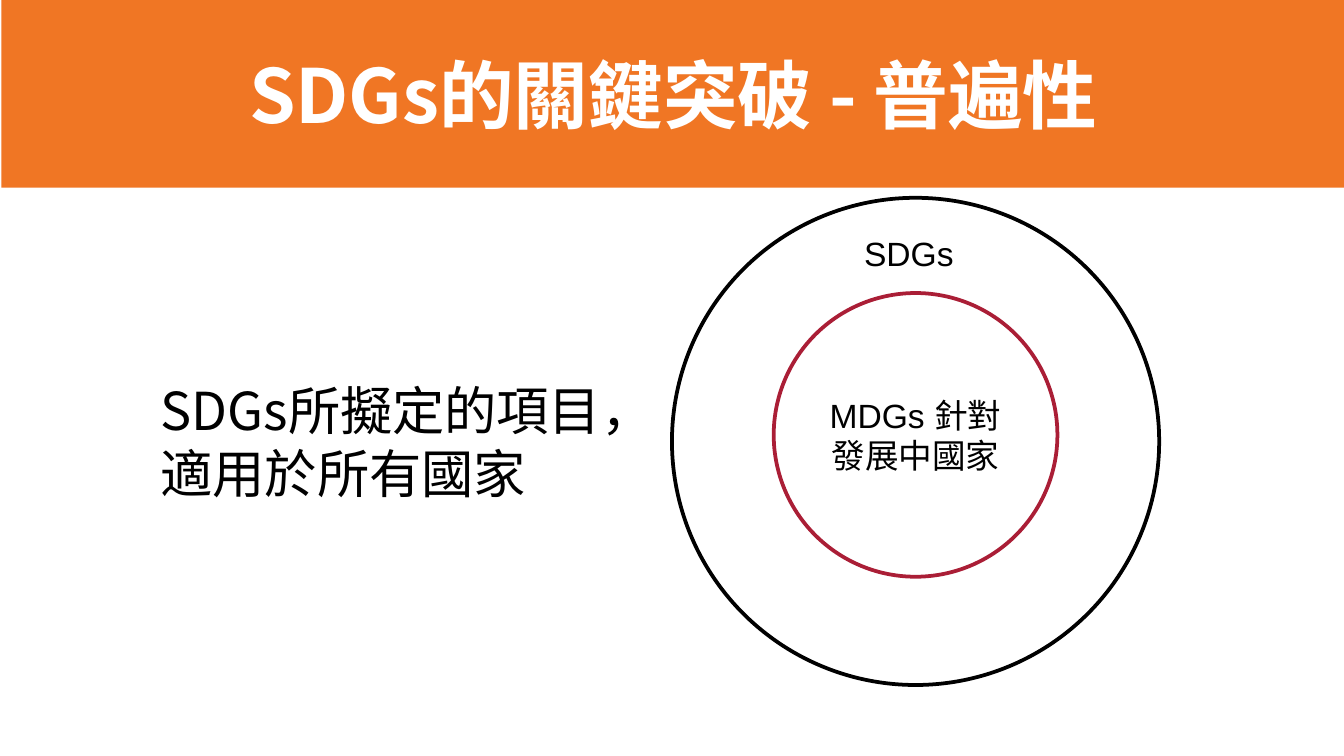
from dataclasses import dataclass

from pptx import Presentation
from pptx.dml.color import RGBColor
from pptx.enum.shapes import MSO_SHAPE
from pptx.enum.text import MSO_ANCHOR, MSO_AUTO_SIZE, PP_ALIGN
from pptx.util import Pt

ELLIPSE = MSO_SHAPE.OVAL
MIDDLE = MSO_ANCHOR.MIDDLE
FIXED, GROW = MSO_AUTO_SIZE.NONE, MSO_AUTO_SIZE.SHAPE_TO_FIT_TEXT
LEFT, CENTER = PP_ALIGN.LEFT, PP_ALIGN.CENTER
TITLE_ONLY = 5


@dataclass(frozen=True)
class Theme:
    """Colours, fonts and type sizes of the slide."""
    orange: RGBColor = RGBColor(0xF0, 0x76, 0x24)
    crimson: RGBColor = RGBColor(0xAA, 0x1E, 0x36)
    black: RGBColor = RGBColor(0, 0, 0)
    white: RGBColor = RGBColor(255, 255, 255)
    heading_font: str = "Noto Sans CJK KR"
    label_font: str = "Arial"
    title_size: int = 40
    statement_size: int = 28
    label_size: int = 18
    outline: int = 2


THEME = Theme()


def write_lines(frame, lines, font, size, color, align=LEFT, bold=False):
    """Write each line as one paragraph with one run."""
    for index, line in enumerate(lines):
        paragraph = frame.paragraphs[0] if index == 0 else frame.add_paragraph()
        paragraph.alignment = align
        run = paragraph.add_run()
        run.text = line
        run.font.name = font
        run.font.size = Pt(size)
        run.font.bold = bold
        run.font.color.rgb = color


def add_title_band(slide, box, text):
    """Turn the title placeholder into a filled band."""
    title = slide.shapes.title
    title.left, title.top, title.width, title.height = map(Pt, box)
    title.fill.solid()
    title.fill.fore_color.rgb = THEME.orange
    frame = title.text_frame
    frame.auto_size = FIXED
    frame.vertical_anchor = MIDDLE
    write_lines(frame, [text], THEME.heading_font, THEME.title_size,
                THEME.white, CENTER, True)


def add_free_text(slide, box, lines, font, size):
    """Place unwrapped black text."""
    frame = slide.shapes.add_textbox(*map(Pt, box)).text_frame
    frame.word_wrap = False
    frame.auto_size = GROW
    write_lines(frame, lines, font, size, THEME.black)


def add_circle(slide, box, color, lines=()):
    """Place an outlined white circle with optional centred lines."""
    circle = slide.shapes.add_shape(ELLIPSE, *map(Pt, box))
    circle.shadow.inherit = False
    circle.fill.solid()
    circle.fill.fore_color.rgb = THEME.white
    circle.line.color.rgb = color
    circle.line.width = Pt(THEME.outline)
    circle.text_frame.vertical_anchor = MIDDLE
    write_lines(circle.text_frame, lines, THEME.label_font, THEME.label_size,
                THEME.black, CENTER)


def add_nested_goals(slide, box):
    """Draw the MDGs circle inside the SDGs circle."""
    left, top, width, height = box
    inner = 152
    add_circle(slide, box, THEME.black)
    add_circle(slide, (left + (width - inner) / 2, top + 51, inner, inner),
               THEME.crimson, ["MDGs 針對", "發展中國家"])
    add_free_text(slide, (left + 95.8, top + 15, 68.4, 29), ["SDGs"],
                  THEME.label_font, THEME.label_size)


def main():
    """Build and save the slide."""
    deck = Presentation()
    deck.slide_width, deck.slide_height = Pt(720), Pt(405)
    slide = deck.slides.add_slide(deck.slide_layouts[TITLE_ONLY])
    add_title_band(slide, (0.7, 0, 720, 100.5), "SDGs的關鍵突破 - 普遍性")
    add_nested_goals(slide, (360, 106, 261, 261))
    add_free_text(slide, (79, 199, 280, 75),
                  ["SDGs所擬定的項目，", "適用於所有國家"],
                  THEME.heading_font, THEME.statement_size)
    deck.save("out.pptx")


if __name__ == "__main__":
    main()
